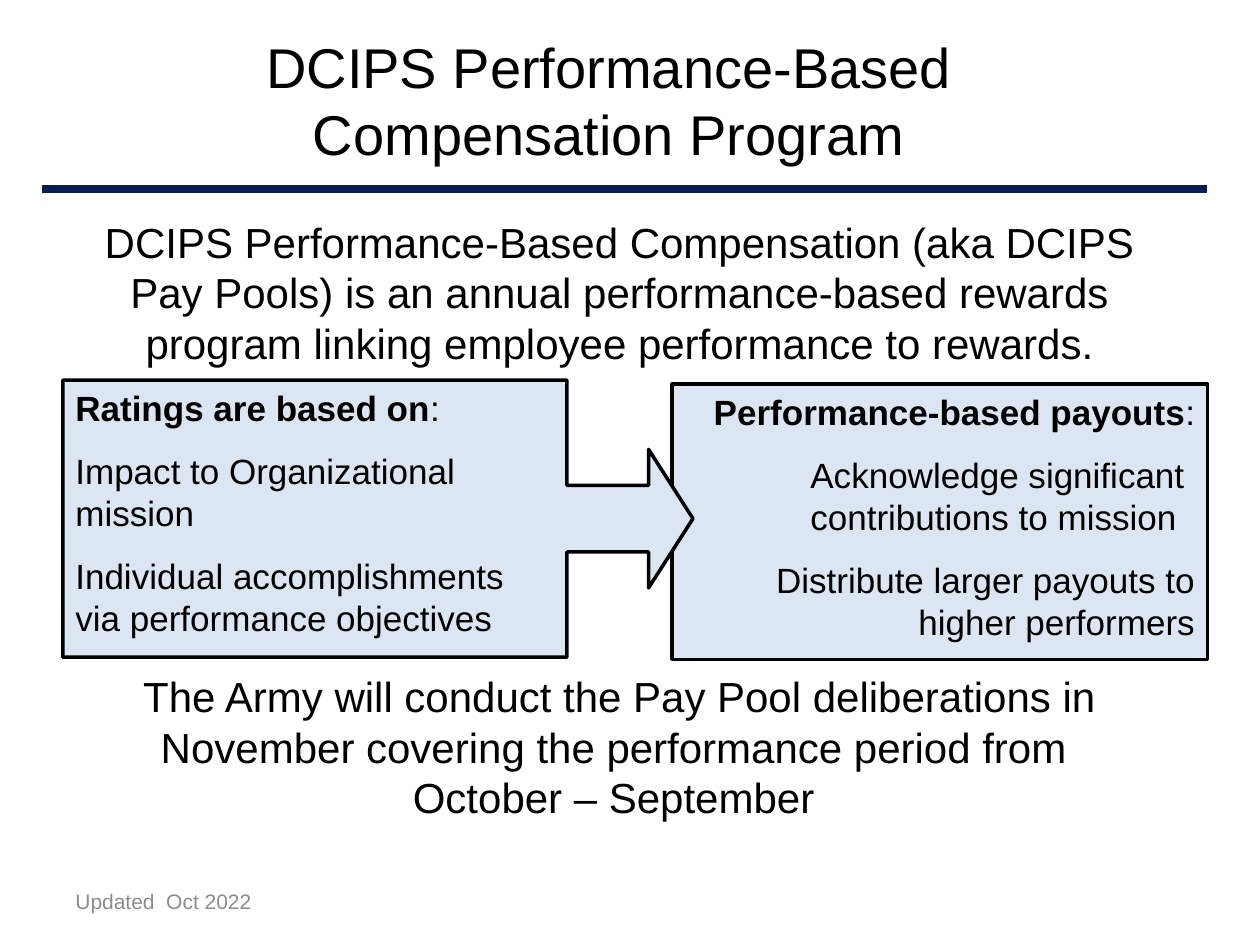
from lxml import etree
from pptx import Presentation, util as u
from pptx.dml import color
from pptx.enum import shapes, text
from pptx.oxml import ns

COLUMNS, ROWS = 120, 90
UNIT = u.Inches(10) // COLUMNS
BLACK, NAVY, PALE, GRAY = "000000", "081D54", "DCE6F2", "8C8C8C"
LEFT, CENTER, RIGHT = text.PP_ALIGN.LEFT, text.PP_ALIGN.CENTER, text.PP_ALIGN.RIGHT


def rgb(value):
    return color.RGBColor.from_string(value)


def grid(*cells):
    return [round(cell * UNIT) for cell in cells]


def style(paragraph, size, fill=BLACK, align=LEFT):
    paragraph.alignment = align
    for run in paragraph.runs:
        run.font.name = "Arial"
        run.font.size = u.Pt(size)
        run.font.color.rgb = rgb(fill)


def add_text(slide, box, words, size, fill=BLACK, align=LEFT, anchor=text.MSO_ANCHOR.MIDDLE):
    frame = slide.shapes.add_textbox(*grid(*box)).text_frame
    frame.word_wrap = True
    frame.vertical_anchor = anchor
    frame.text = words
    style(frame.paragraphs[0], size, fill, align)


def add_header(slide, box, title):
    left, top, width, height = box
    add_text(slide, (21, top, 74, 15), title, 32, align=CENTER)
    bottom = top + height
    rule = slide.shapes.add_connector(
        shapes.MSO_CONNECTOR.STRAIGHT, *grid(left, bottom, left + width, bottom))
    rule.line.color.rgb = rgb(NAVY)
    rule.line.width = u.Pt(4.5)
    etree.SubElement(rule._element.spPr, ns.qn("a:effectLst"))


def add_panel(slide, box, kind, heading, items, adjustments=()):
    panel = slide.shapes.add_shape(kind, *grid(*box))
    for index, value in enumerate(adjustments):
        panel.adjustments[index] = value
    panel.shadow.inherit = False
    panel.fill.solid()
    panel.fill.fore_color.rgb = rgb(PALE)
    panel.line.color.rgb = rgb(BLACK)
    panel.line.width = u.Pt(2)
    frame = panel.text_frame
    frame.word_wrap = True
    frame.vertical_anchor = text.MSO_ANCHOR.TOP
    first = frame.paragraphs[0]
    first.text = heading
    first.add_run().text = ":"
    style(first, 20, align=items[0][1] if len(items) == 1 else items[-1][1])
    first.runs[0].font.bold = True
    first.space_after = u.Pt(6)
    for words, align, indent in items:
        paragraph = frame.add_paragraph()
        paragraph.text = words
        style(paragraph, 20, align=align)
        paragraph.space_before = paragraph.space_after = u.Pt(6)
        paragraph._p.get_or_add_pPr().set("marL", str(grid(indent)[0]))


def main():
    presentation = Presentation()
    presentation.slide_width, presentation.slide_height = grid(COLUMNS, ROWS)
    slide = presentation.slides.add_slide(presentation.slide_layouts[6])
    add_header(slide, (4, 2, 111, 16), "DCIPS Performance-Based Compensation Program")
    add_text(slide, (5, 20, 108, 16),
             "DCIPS Performance-Based Compensation (aka DCIPS Pay Pools) is an annual "
             "performance-based rewards program linking employee performance to rewards.",
             24, align=CENTER, anchor=text.MSO_ANCHOR.TOP)
    add_text(slide, (5, 63.3, 108, 16),
             "The Army will conduct the Pay Pool deliberations in November covering "
             "the performance period from \vOctober – September ",
             24, align=CENTER, anchor=text.MSO_ANCHOR.TOP)
    add_panel(slide, (64, 36.6, 51, 26.2), shapes.MSO_SHAPE.RECTANGLE,
              "Performance-based payouts",
              [("Acknowledge significant \vcontributions to mission", LEFT, 12),
               ("Distribute larger payouts to higher performers", RIGHT, 6)])
    add_panel(slide, (6, 36.2, 60, 26.4), shapes.MSO_SHAPE.RIGHT_ARROW_CALLOUT,
              "Ratings are based on",
              [("Impact to Organizational mission", LEFT, 0),
               ("Individual accomplishments via performance objectives", LEFT, 0)],
              (0.24, 0.25, 0.16, 0.8))
    add_text(slide, (6, 83.4, 28, 4.8), "Updated  Oct 2022", 12, GRAY)
    presentation.save("out.pptx")


if __name__ == "__main__":
    main()
